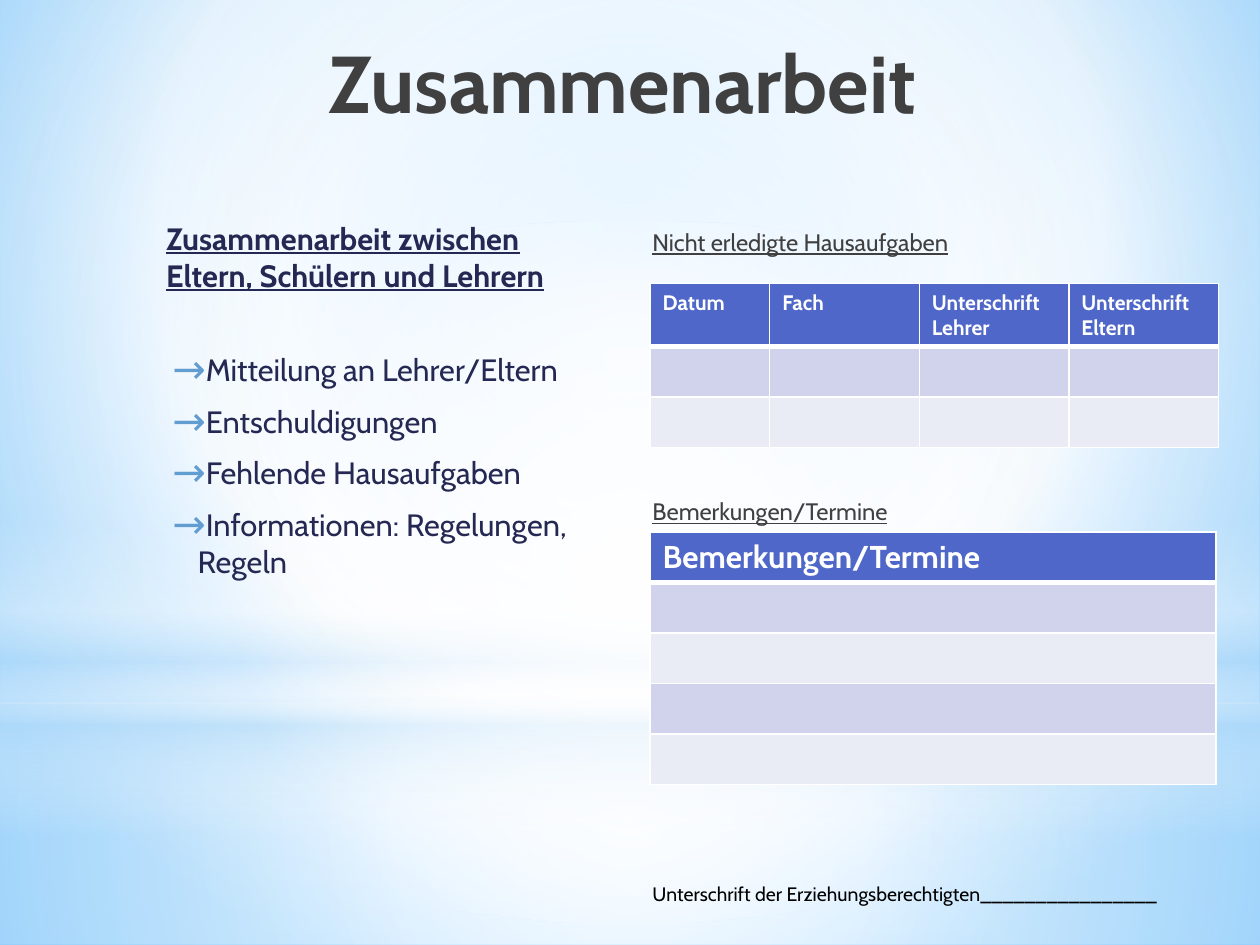
from lxml.etree import SubElement as Sub
from pptx import Presentation
from pptx.dml.color import RGBColor as RGB
from pptx.enum.shapes import MSO_SHAPE as SHAPE
from pptx.enum.text import PP_ALIGN as ALIGN
from pptx.oxml import parse_xml
from pptx.oxml.ns import nsdecls, qn
from pptx.util import Inches, Pt

WIDE, HIGH = Inches(10), Inches(7.5)
FONT = "Cabin"
WHITE, BLACK = RGB(255, 255, 255), RGB(0, 0, 0)
GREY, NAVY = RGB(0x40, 0x40, 0x40), RGB(0x24, 0x28, 0x52)
ARROW, HEAD = RGB(0x62, 0x9D, 0xD1), RGB(0x4E, 0x67, 0xC8)
BANDS = RGB(0xD0, 0xD3, 0xEB), RGB(0xE9, 0xEB, 0xF5)
SKY, PALE, BLUE = RGB(0x9E, 0xD5, 0xFF), RGB(0xB4, 0xDC, 0xFA), RGB(0x5B, 0xB9, 0xFF)
MID = (50, 50, 50, 50)


def scale(box):
    """Turn shares of the slide into lengths."""
    return [int(part * side) for part, side in zip(box, (WIDE, HIGH) * 2)]


def blend(fill, root, stops, focus=None):
    """Fill with a gradient: round about the focus, or top to bottom without one."""
    fill.solid()
    solid = root.find(".//" + qn("a:solidFill"))
    marks = "".join(
        f'<a:gs pos="{pos * 1000}"><a:srgbClr val="{tint}">'
        f'<a:alpha val="{alpha * 1000}"/></a:srgbClr></a:gs>'
        for pos, tint, alpha in stops)
    if focus:
        edges = " ".join(f'{side}="{n * 1000}"' for side, n in zip("ltrb", focus))
        way = f'<a:path path="circle"><a:fillToRect {edges}/></a:path>'
    else:
        way = '<a:lin ang="5400000" scaled="0"/>'
    grad = parse_xml(f'<a:gradFill {nsdecls("a")} rotWithShape="1">'
                     f'<a:gsLst>{marks}</a:gsLst>{way}</a:gradFill>')
    solid.getparent().replace(solid, grad)


def backdrop(slide):
    blend(slide.background.fill, slide.element,
          [(0, SKY, 100), (60, WHITE, 100), (100, BLUE, 100)], (20, 10, 20, 60))
    layers = [
        (SHAPE.RECTANGLE, (0, .744, 1, .256), MID,
         [(0, WHITE, 91), (37, WHITE, 76), (100, PALE, 79)]),
        (SHAPE.RECTANGLE, (0, 0, 1, .744), MID,
         [(0, WHITE, 89), (48, WHITE, 62), (100, PALE, 79)]),
        (SHAPE.RECTANGLE, (0, .55, 1, .333), None,
         [(0, WHITE, 0), (29, WHITE, 30), (45, PALE, 40),
          (55, WHITE, 26), (65, PALE, 60), (100, WHITE, 0)]),
        (SHAPE.OVAL, (0, .233, 1, .744), MID,
         [(0, WHITE, 100), (56, WHITE, 0)]),
    ]
    for kind, box, focus, stops in layers:
        shape = slide.shapes.add_shape(kind, *scale(box))
        shape.shadow.inherit = False
        shape.line.fill.background()
        blend(shape.fill, shape.element, stops, focus)


def style(para, tint, **form):
    para.font.name = FONT
    para.font.color.rgb = tint
    for key, value in form.items():
        setattr(para.font, key, value)


def frame(slide, box):
    text = slide.shapes.add_textbox(*scale(box)).text_frame
    text.word_wrap = True
    text.margin_top = text.margin_bottom = 0
    return text


def label(slide, box, words, tint, align=ALIGN.LEFT, **form):
    para = frame(slide, box).paragraphs[0]
    para.text, para.alignment = words, align
    style(para, tint, **form)


def bullet(para):
    props = para._p.get_or_add_pPr()
    props.set("marL", str(Inches(.25)))
    props.set("indent", str(Inches(-.2)))
    Sub(Sub(props, qn("a:buClr")), qn("a:srgbClr")).set("val", str(ARROW))
    Sub(props, qn("a:buSzPct")).set("val", "130000")
    Sub(props, qn("a:buFont")).set("typeface", FONT)
    Sub(props, qn("a:buChar")).set("char", "→")


def topics(slide, box, head, items):
    text = frame(slide, box)
    para = text.paragraphs[0]
    para.text, para.space_after = head, Pt(3)
    style(para, NAVY, size=Pt(17.6), bold=True, underline=True)
    for i, item in enumerate(items):
        para = text.add_paragraph()
        para.text = item
        para.space_before, para.space_after = Pt(5.3 if i else 30), Pt(3)
        bullet(para)
        style(para, NAVY, size=Pt(17.6))


def border(cell, foot):
    props = cell._tc.get_or_add_tcPr()
    for i, (side, width) in enumerate(zip("LRTB", (1, 1, 1, foot))):
        props.insert(i, parse_xml(
            f'<a:ln{side} {nsdecls("a")} w="{Pt(width)}"><a:solidFill>'
            f'<a:srgbClr val="{WHITE}"/></a:solidFill></a:ln{side}>'))


def form(slide, box, heads, cols, rows, size):
    """Table with a header row and empty banded rows; cols and rows are weights."""
    x, y, wide, high = scale(box)
    table = slide.shapes.add_table(len(rows), len(cols), x, y, wide, high).table
    for col, part in zip(table.columns, cols):
        col.width = int(wide * part / sum(cols))
    for r, (row, part) in enumerate(zip(table.rows, rows)):
        row.height = int(high * part / sum(rows))
        for cell, head in zip(row.cells, heads):
            cell.fill.solid()
            cell.fill.fore_color.rgb = BANDS[(r - 1) % 2] if r else HEAD
            border(cell, 1 if r else 3)
            if not r:
                cell.text = head
                style(cell.text_frame.paragraphs[0], WHITE, size=Pt(size), bold=True)


def main():
    deck = Presentation()
    deck.slide_width, deck.slide_height = WIDE, HIGH
    slide = deck.slides.add_slide(deck.slide_layouts[6])
    backdrop(slide)
    label(slide, (.138, .035, .712, .167), "Zusammenarbeit", GREY,
          ALIGN.CENTER, size=Pt(46), bold=True)
    topics(slide, (.122, .232, .366, .397),
           "Zusammenarbeit zwischen Eltern, Schülern und Lehrern",
           ["Mitteilung an Lehrer/Eltern", "Entschuldigungen",
            "Fehlende Hausaufgaben", "Informationen: Regelungen, Regeln"])
    for y, words in (.241, "Nicht erledigte Hausaufgaben"), (.526, "Bemerkungen/Termine"):
        label(slide, (.508, y, .442, .035), words, GREY, size=Pt(13.6), underline=True)
    label(slide, (.508, .933, .442, .03),
          "Unterschrift der Erziehungsberechtigten________________",
          BLACK, size=Pt(11.1))
    form(slide, (.516, .3, .451, .173),
         ["Datum", "Fach", "Unterschrift Lehrer", "Unterschrift Eltern"],
         [4, 5, 5, 5], [5, 4, 4], 12)
    form(slide, (.516, .563, .449, .267), ["Bemerkungen/Termine"], [1], [1] * 5, 18)
    deck.save("out.pptx")


if __name__ == "__main__":
    main()
